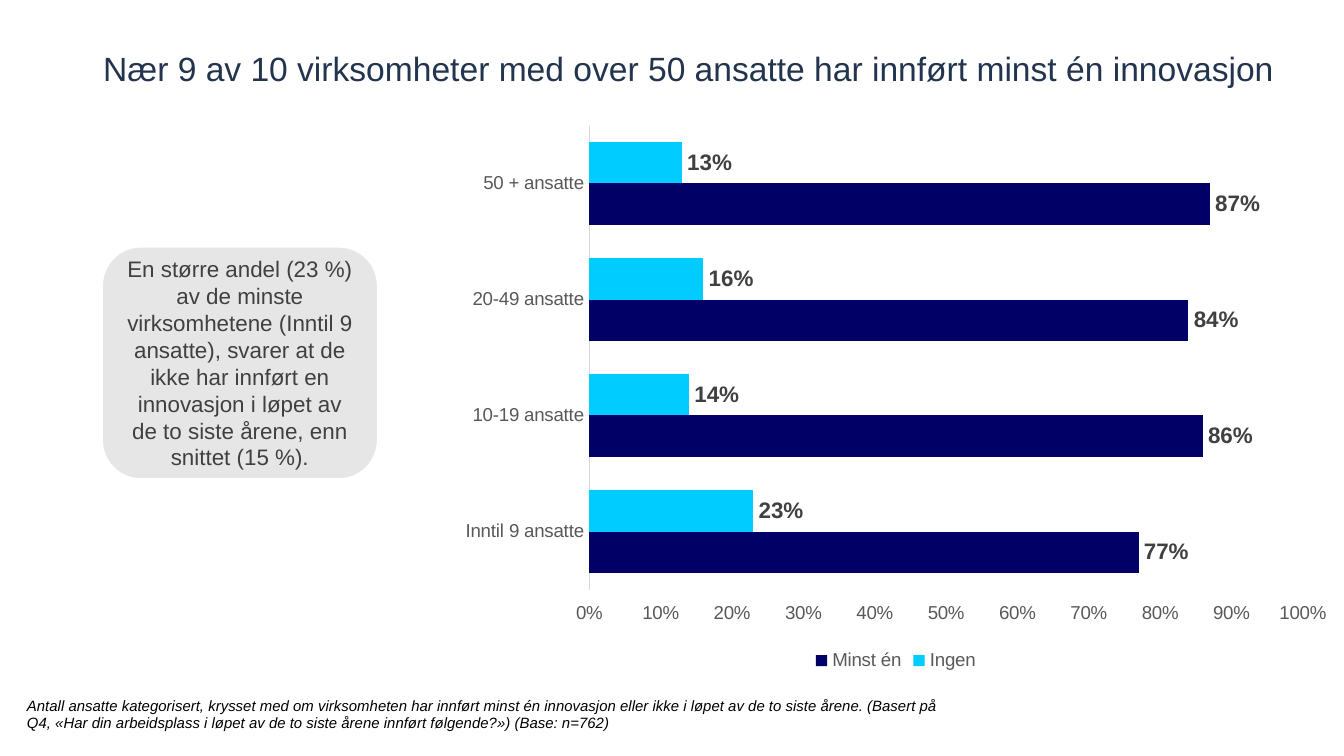
from pptx import Presentation
from pptx.chart.data import CategoryChartData
from pptx.dml.color import RGBColor
from pptx.enum.chart import (XL_CHART_TYPE, XL_LABEL_POSITION, XL_LEGEND_POSITION,
                             XL_TICK_LABEL_POSITION, XL_TICK_MARK)
from pptx.enum.shapes import MSO_SHAPE
from pptx.enum.text import MSO_ANCHOR, MSO_AUTO_SIZE, PP_ALIGN
from pptx.util import Cm, Pt

BAR = XL_CHART_TYPE.BAR_CLUSTERED
OUTSIDE_END = XL_LABEL_POSITION.OUTSIDE_END
LEGEND_BOTTOM = XL_LEGEND_POSITION.BOTTOM
HIGH_SIDE = XL_TICK_LABEL_POSITION.HIGH
NO_TICK = XL_TICK_MARK.NONE
ROUNDED = MSO_SHAPE.ROUNDED_RECTANGLE
TOP, MIDDLE, BOTTOM = MSO_ANCHOR.TOP, MSO_ANCHOR.MIDDLE, MSO_ANCHOR.BOTTOM
LEFT, CENTER = PP_ALIGN.LEFT, PP_ALIGN.CENTER
NO_AUTOFIT = MSO_AUTO_SIZE.NONE


def color(hex_string):
    return RGBColor.from_string(hex_string)


def set_font(font, size, hex_string, bold=False, italic=False):
    font.name = "Arial"
    font.size = Pt(size)
    font.bold = bold
    font.italic = italic
    font.color.rgb = color(hex_string)


deck = Presentation()
deck.slide_width, deck.slide_height = Cm(25.4), Cm(14.28)
page = deck.slides.add_slide(deck.slide_layouts[5])

# Title
title = page.shapes.title
title.left, title.top, title.width, title.height = Cm(1.95), Cm(0.69), Cm(22.38), Cm(0.99)
frame = title.text_frame
frame.text = "Nær 9 av 10 virksomheter med over 50 ansatte har innført minst én innovasjon"
frame.auto_size = NO_AUTOFIT
frame.vertical_anchor = BOTTOM
frame.margin_left = frame.margin_right = frame.margin_top = frame.margin_bottom = 0
para = frame.paragraphs[0]
para.alignment = LEFT
para.line_spacing = 0.9
set_font(para.font, 18, "23344F")

# Footnote
note = page.shapes.add_textbox(Cm(0.51), Cm(13.15), Cm(17.63), Cm(0.69))
frame = note.text_frame
frame.word_wrap = True
frame.vertical_anchor = TOP
frame.margin_left = frame.margin_right = frame.margin_top = frame.margin_bottom = 0
frame.text = (
    "Antall ansatte kategorisert, krysset med om virksomheten har innført minst én "
    "innovasjon eller ikke i løpet av de to siste årene. (Basert på Q4, «Har din "
    "arbeidsplass i løpet av de to siste årene innført følgende?») (Base: n=762)")
set_font(frame.paragraphs[0].font, 8, "000000", italic=True)

# Bar chart: share with and without innovation, by company size
data = CategoryChartData(number_format="0%")
data.categories = ["50 + ansatte", "20-49 ansatte", "10-19 ansatte", "Inntil 9 ansatte"]
data.add_series("Ingen", [0.13, 0.16, 0.14, 0.23])
data.add_series("Minst én", [0.87, 0.84, 0.86, 0.77])
chart = page.shapes.add_chart(BAR, Cm(8.46), Cm(2.16), Cm(16.94), Cm(10.62), data).chart
chart.has_title = False
set_font(chart.font, 10, "000000")

plot = chart.plots[0]
plot.gap_width = 80
plot.overlap = 0
plot.vary_by_categories = False
for series, fill in zip(plot.series, ["00CCFF", "000066"]):
    series.format.fill.solid()
    series.format.fill.fore_color.rgb = color(fill)
    labels = series.data_labels
    labels.show_value = True
    labels.position = OUTSIDE_END
    labels.number_format = "0%"
    labels.number_format_is_linked = False
    set_font(labels.font, 12, "404040", bold=True)

# Axes and legend; sizes run downwards, so the high side is the bottom
sizes, shares = chart.category_axis, chart.value_axis
for axis in (sizes, shares):
    axis.major_tick_mark = axis.minor_tick_mark = NO_TICK
    axis.has_major_gridlines = False
    set_font(axis.tick_labels.font, 10, "595959")
sizes.reverse_order = True
sizes.format.line.color.rgb = color("D9D9D9")
sizes.format.line.width = Pt(0.75)
shares.minimum_scale, shares.maximum_scale, shares.major_unit = 0, 1, 0.1
shares.tick_label_position = HIGH_SIDE
shares.tick_labels.number_format = "0%"
shares.tick_labels.number_format_is_linked = False
shares.format.line.fill.background()
chart.has_legend = True
chart.legend.position = LEGEND_BOTTOM
chart.legend.include_in_layout = False
set_font(chart.legend.font, 10, "595959")

# Comment box
box = page.shapes.add_shape(ROUNDED, Cm(1.93), Cm(4.66), Cm(5.21), Cm(4.39))
box.shadow.inherit = False
box.fill.solid()
box.fill.fore_color.rgb = color("E7E6E6")
box.line.color.rgb = color("FFFFFF")
box.line.width = Pt(1)
frame = box.text_frame
frame.word_wrap = True
frame.vertical_anchor = MIDDLE
frame.text = (
    "En større andel (23 %) av de minste virksomhetene (Inntil 9 ansatte), svarer at de "
    "ikke har innført en innovasjon i løpet av de to siste årene, enn snittet (15 %).")
para = frame.paragraphs[0]
para.alignment = CENTER
set_font(para.font, 12, "404040")

deck.save("out.pptx")
